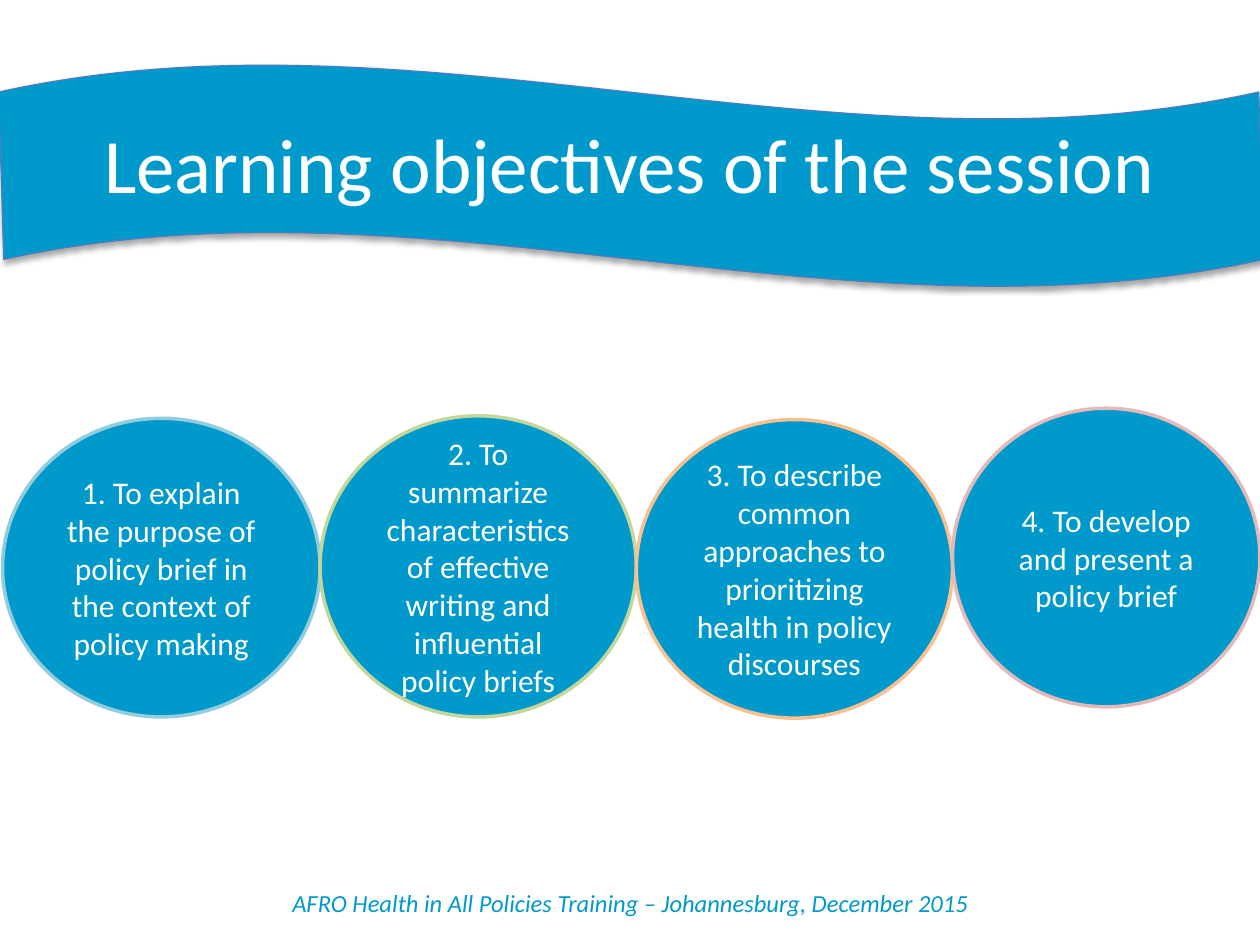
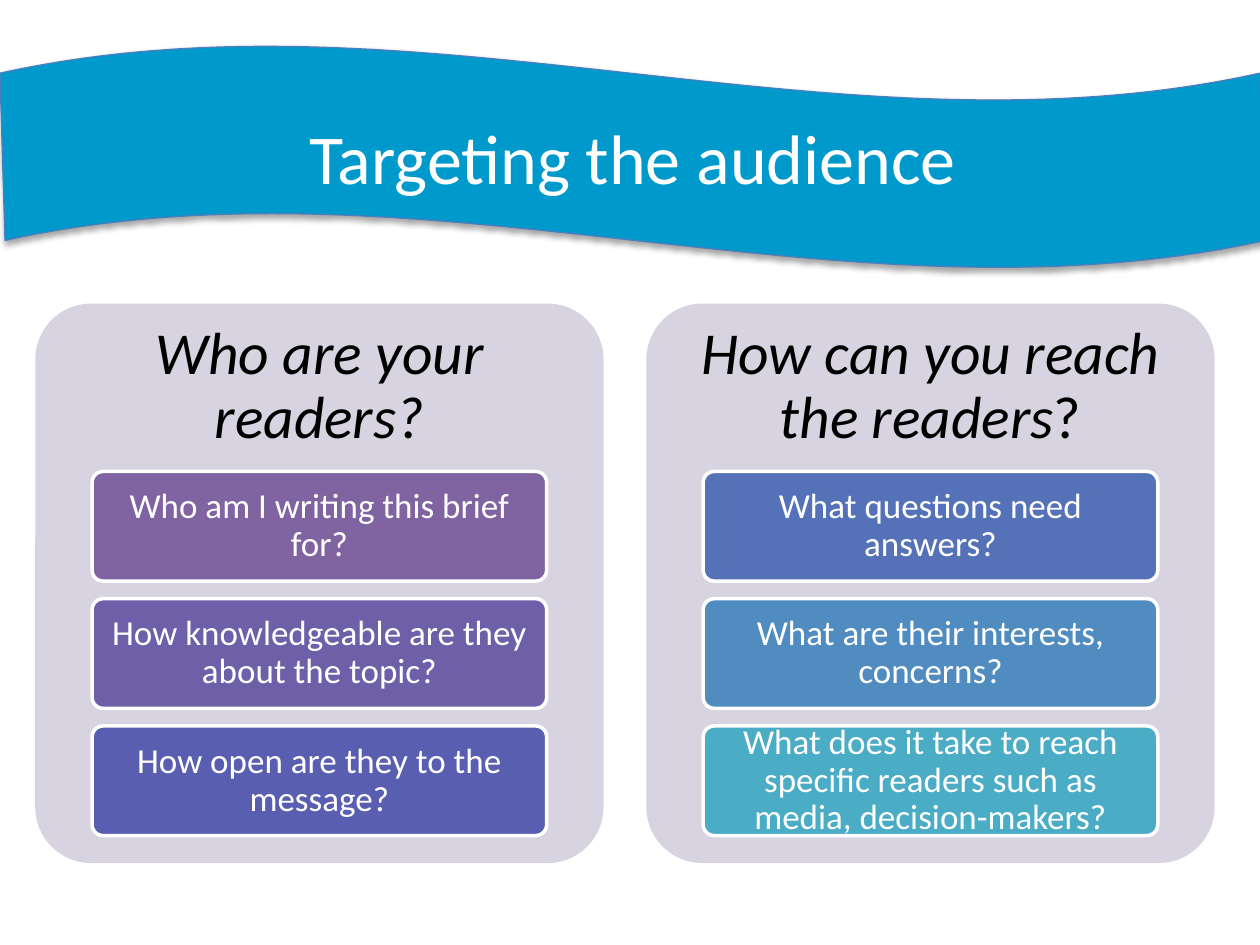
from dataclasses import dataclass
from typing import NamedTuple

from lxml import etree
from pptx import Presentation
from pptx.dml.color import RGBColor
from pptx.enum.shapes import MSO_SHAPE
from pptx.enum.text import MSO_ANCHOR, PP_ALIGN
from pptx.oxml.ns import qn
from pptx.util import Inches, Pt

WAVE, ELLIPSE, ROUNDED = MSO_SHAPE.WAVE, MSO_SHAPE.OVAL, MSO_SHAPE.ROUNDED_RECTANGLE
TOP, MIDDLE = MSO_ANCHOR.TOP, MSO_ANCHOR.MIDDLE
CENTER = PP_ALIGN.CENTER
TITLE_ONLY = 5


@dataclass(frozen=True)
class Theme:
    font: str = "Calibri"
    brand: str = "0099CC"
    wave_edge: str = "4B7EBC"
    panel: str = "D8D3E0"
    light: str = "FFFFFF"
    dark: str = "000000"
    heading_size: int = 34
    card_size: int = 20
    objective_size: int = 18
    footer_size: int = 14
    edge: float = 2
    wave_edge_width: float = 0.75


THEME = Theme()


class Box(NamedTuple):
    """Left, top, width and height in inches."""
    left: float
    top: float
    width: float
    height: float

    def lengths(self):
        return [Inches(value) for value in self]


OBJECTIVES = [
    (Box(0.02, 3.32, 2.52, 2.37), "93CDDD",
     "1. To explain the purpose of policy brief in the context of policy making"),
    (Box(2.54, 3.3, 2.51, 2.39), "C3D69B",
     "2. To summarize characteristics of effective writing and influential policy briefs"),
    (Box(5.05, 3.33, 2.51, 2.37), "FAC090",
     "3. To describe common approaches to prioritizing health in policy discourses"),
    (Box(7.56, 3.24, 2.44, 2.37), "E6B9B8",
     "4. To develop and present a policy brief"),
]

# Heading spans are (text, italic); cards are (fill, text).
PANELS = [
    ([("Who are your readers?", True)], [
        ("8064A2", "Who am I writing this brief for?"),
        ("6E5FA9", "How knowledgeable are they about the topic?"),
        ("5A5EB1", "How open are they to the message?"),
    ]),
    ([("How can you reach the readers", True), ("?", False)], [
        ("5572B8", "What questions need answers?"),
        ("508CBF", "What are their interests, concerns?"),
        ("4BACC6", "What does it take to reach specific readers such as media, decision-makers?"),
    ]),
]


def add_filled(page, kind, box, fill, edge=None, edge_width=THEME.edge):
    shape = page.shapes.add_shape(kind, *box.lengths())
    shape.shadow.inherit = False
    shape.fill.solid()
    shape.fill.fore_color.rgb = RGBColor.from_string(fill)
    if edge:
        shape.line.color.rgb = RGBColor.from_string(edge)
        shape.line.width = Pt(edge_width)
    else:
        shape.line.fill.background()
    return shape


def write(shape, spans, size, color, anchor=MIDDLE, insets=(0.1, 0.05), spacing=None):
    """Fill a shape with one centred paragraph of (text, italic) spans."""
    frame = shape.text_frame
    frame.word_wrap = True
    frame.vertical_anchor = anchor
    frame.margin_left = frame.margin_right = Inches(insets[0])
    frame.margin_top = frame.margin_bottom = Inches(insets[1])
    para = frame.paragraphs[0]
    para.alignment = CENTER
    if spacing:
        para.line_spacing = spacing
    para.font.name = THEME.font
    para.font.size = Pt(size)
    para.font.color.rgb = RGBColor.from_string(color)
    for text, italic in spans:
        span = para.add_run()
        span.text = text
        span.font.italic = italic


def cast_shadow(shape):
    effects = shape._element.spPr.find(qn("a:effectLst"))
    shadow = etree.SubElement(effects, qn("a:outerShdw"), blurRad=str(Pt(3.1)),
                              dist=str(Pt(1.8)), dir="5400000", rotWithShape="0")
    color = etree.SubElement(shadow, qn("a:srgbClr"), val=THEME.dark)
    etree.SubElement(color, qn("a:alpha"), val="35000")


def add_banner_page(deck, text, size, wave_box, title_box):
    """Add a page whose title lies on a wave banner."""
    page = deck.slides.add_slide(deck.slide_layouts[TITLE_ONLY])
    title = page.shapes.title
    wave = add_filled(page, WAVE, wave_box, THEME.brand, THEME.wave_edge, THEME.wave_edge_width)
    wave.adjustments[0] = 0.125
    wave.adjustments[1] = 0.002
    cast_shadow(wave)
    title._element.addprevious(wave._element)
    title.left, title.top, title.width, title.height = title_box.lengths()
    write(title, [(text, False)], size, THEME.light)
    return page


def add_objective(page, box, edge, text):
    ellipse = add_filled(page, ELLIPSE, box, THEME.brand, edge)
    write(ellipse, [(text, False)], THEME.objective_size, THEME.light)


def add_footer(page, box, text):
    footer = page.shapes.add_textbox(*box.lengths())
    write(footer, [(text, True)], THEME.footer_size, THEME.brand, TOP)


def add_panel(page, box, heading, cards):
    """Place a heading over a column of equal cards on a rounded panel."""
    panel = add_filled(page, ROUNDED, box, THEME.panel)
    panel.adjustments[0] = 0.1
    heading_height = 0.3 * box.height
    heading_box = page.shapes.add_textbox(*box._replace(height=heading_height).lengths())
    write(heading_box, heading, THEME.heading_size, THEME.dark, insets=(0.14, 0.14), spacing=0.9)
    indent, card_height, pitch = 0.1 * box.width, 0.87, 1.01
    for row, (fill, text) in enumerate(cards):
        card_box = Box(box.left + indent, box.top + heading_height + row * pitch,
                       box.width - 2 * indent, card_height)
        card = add_filled(page, ROUNDED, card_box, fill, THEME.light)
        card.adjustments[0] = 0.1
        write(card, [(text, False)], THEME.card_size, THEME.light,
              insets=(0.06, 0.04), spacing=0.9)


def build_objectives(deck):
    page = add_banner_page(deck, "Learning objectives of the session", 44,
                           Box(-0.01, 0.51, 10.04, 1.77), Box(0.5, 0.67, 9, 1.25))
    for box, edge, text in OBJECTIVES:
        add_objective(page, box, edge, text)
    add_footer(page, Box(0.97, 7, 8.07, 0.34),
               "AFRO Health in All Policies Training – Johannesburg, December 2015")


def build_audience(deck):
    page = add_banner_page(deck, "Targeting the audience", 40,
                           Box(0, 0.36, 10.04, 1.77), Box(0.52, 0.62, 9, 1.25))
    for column, (heading, cards) in enumerate(PANELS):
        add_panel(page, Box(0.28 + column * 4.85, 2.41, 4.51, 4.44), heading, cards)


def main():
    deck = Presentation()
    deck.slide_width, deck.slide_height = Inches(10), Inches(7.5)
    build_objectives(deck)
    build_audience(deck)
    deck.save("out.pptx")


if __name__ == "__main__":
    main()
